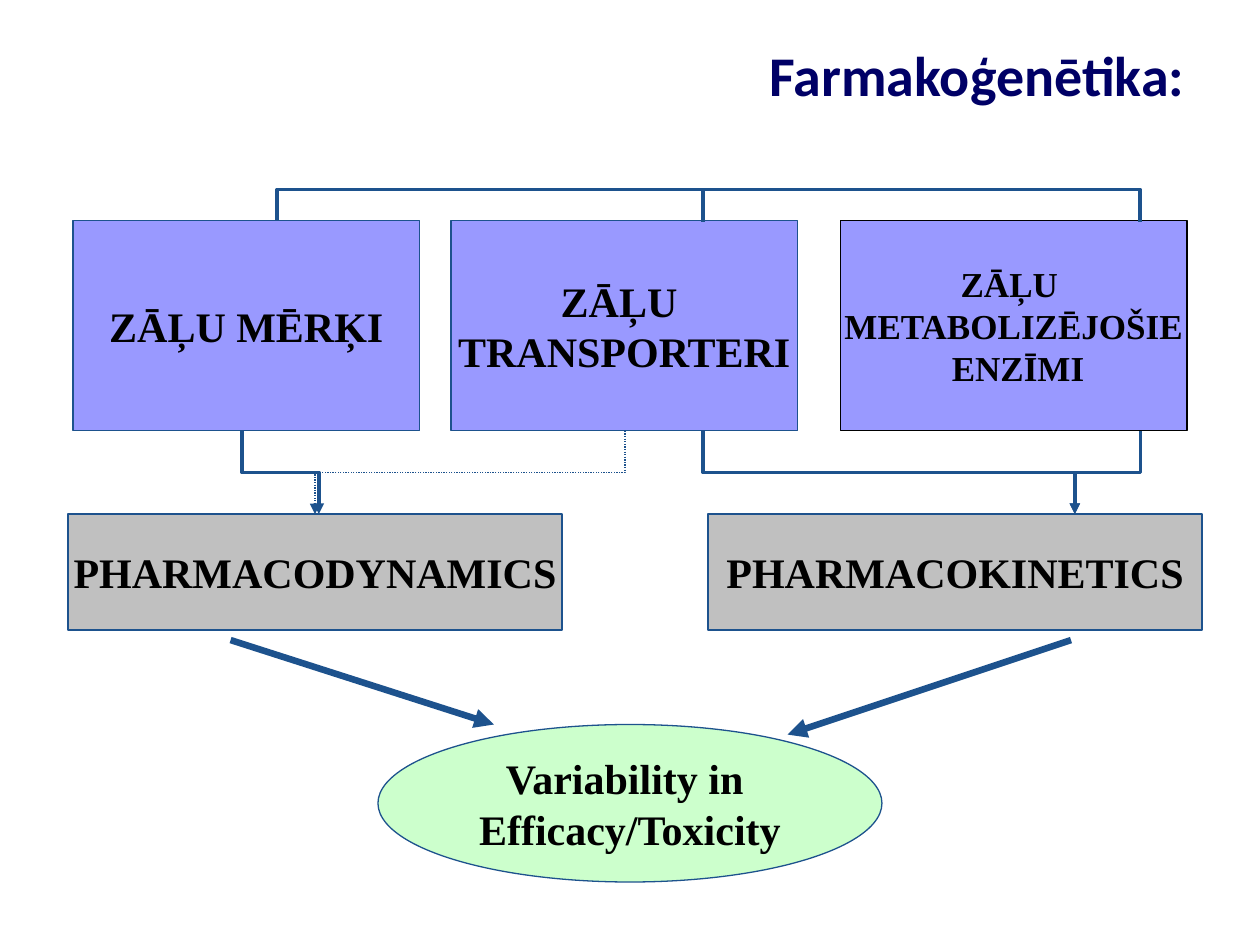
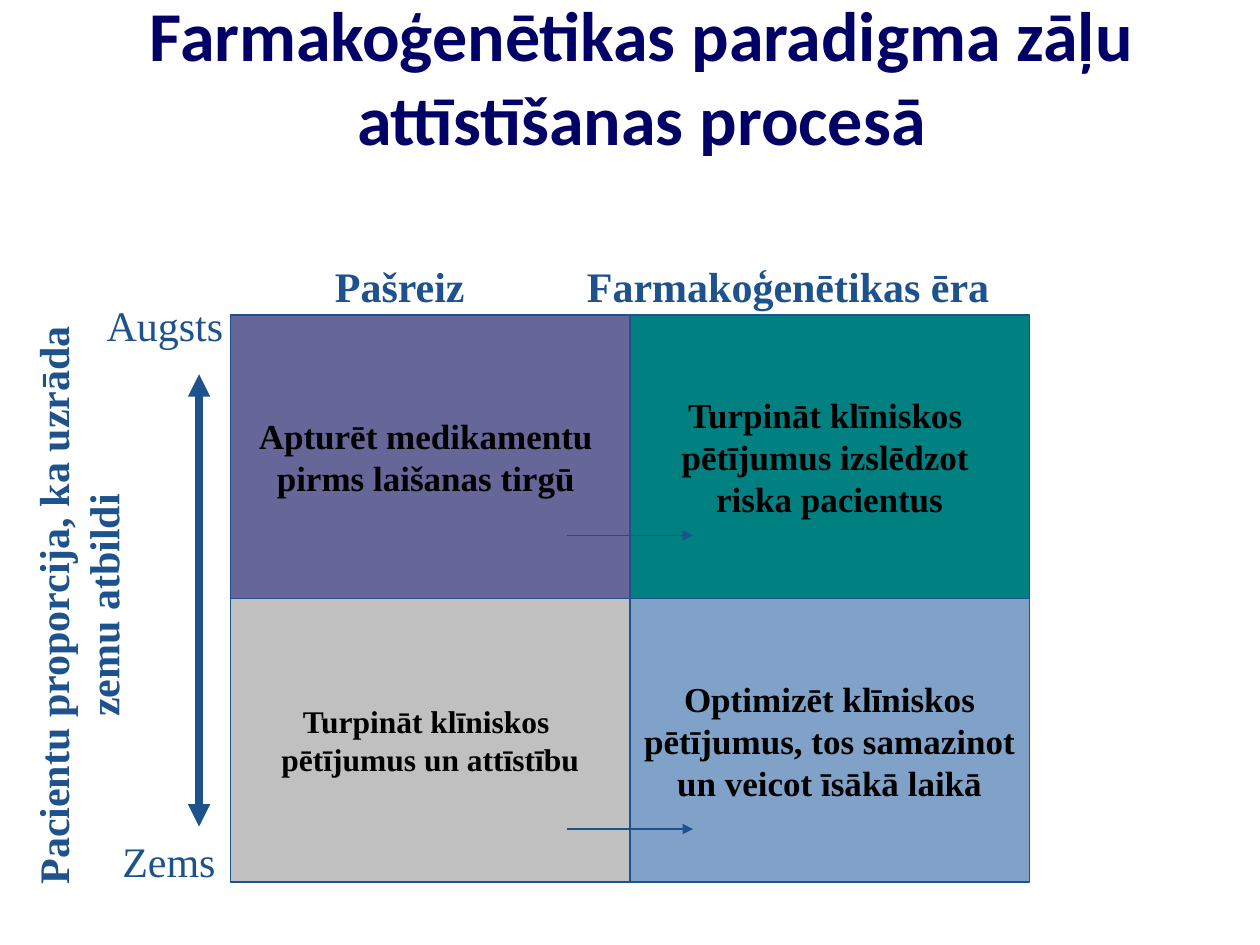
from pptx import Presentation
from pptx.dml.color import RGBColor
from pptx.enum.dml import MSO_LINE
from pptx.enum.shapes import MSO_CONNECTOR, MSO_SHAPE
from pptx.enum.text import MSO_ANCHOR, PP_ALIGN
from pptx.oxml.ns import qn
from pptx.util import Inches, Pt
from lxml.etree import SubElement

TITLE_FONT, BODY_FONT = "Calibri", "Times New Roman"
NAVY, BLUE, BLACK = "000066", "1D528D", "000000"
LILAC, GREY, MINT = "9999FF", "C0C0C0", "CCFFCC"
PURPLE, TEAL, SKY = "666699", "008080", "80A2C8"


def color(hex_code):
    return RGBColor.from_string(hex_code)


def write(frame, paragraphs, size, ink, font=BODY_FONT, bold=True,
          align=PP_ALIGN.CENTER, wrap=False, anchor=MSO_ANCHOR.MIDDLE, tab=None):
    frame.word_wrap = wrap
    frame.vertical_anchor = anchor
    for index, content in enumerate(paragraphs):
        paragraph = frame.paragraphs[0] if index == 0 else frame.add_paragraph()
        paragraph.alignment = align
        if tab:
            tabs = SubElement(paragraph._p.get_or_add_pPr(), qn("a:tabLst"))
            SubElement(tabs, qn("a:tab"), pos=str(Inches(tab)), algn="l")
        for number, line in enumerate(content.split("\n")):
            if number:
                paragraph.add_line_break()
            run = paragraph.add_run()
            run.text = line
            run.font.name = font
            run.font.size = Pt(size)
            run.font.bold = bold
            run.font.color.rgb = color(ink)


def add_text(slide, bounds, text, size=24, ink=BLUE, rotation=0,
             anchor=MSO_ANCHOR.TOP, **style):
    label = slide.shapes.add_textbox(*map(Inches, bounds))
    label.rotation = rotation
    write(label.text_frame, [text], size, ink, anchor=anchor, **style)


def add_title(slide, bounds, text, size, align):
    add_text(slide, bounds, text, size, NAVY, font=TITLE_FONT, align=align,
             wrap=True, anchor=MSO_ANCHOR.MIDDLE)


def add_node(shapes, bounds, paragraphs, fill, size=24, outline=BLUE,
             kind=MSO_SHAPE.RECTANGLE):
    node = shapes.add_shape(kind, *map(Inches, bounds))
    node.shadow.inherit = False
    node.fill.solid()
    node.fill.fore_color.rgb = color(fill)
    node.line.color.rgb = color(outline)
    node.line.width = Pt(0.75)
    write(node.text_frame, paragraphs, size, BLACK)


def add_line(shapes, start, end, width, arrows=("tailEnd",), dash=None,
             kind=MSO_CONNECTOR.STRAIGHT):
    line = shapes.add_connector(kind, *map(Inches, (*start, *end)))
    line.line.color.rgb = color(BLUE)
    line.line.width = Pt(width)
    if dash:
        line.line.dash_style = dash
    for arrow in arrows:
        SubElement(line.line._get_or_add_ln(), qn(f"a:{arrow}"), type="triangle")
    SubElement(line._element.spPr, qn("a:effectLst"))
    return line


def add_elbow(shapes, start, end, width=2, bend=0.5, **style):
    (x1, y1), (x2, y2) = start, end
    middle_x, middle_y = (x1 + x2) / 2, (y1 + y2) / 2
    half_run, half_drop = (x2 - x1) / 2, (y2 - y1) / 2
    elbow = add_line(shapes, (middle_x - half_drop, middle_y + half_run),
                     (middle_x + half_drop, middle_y - half_run), width,
                     kind=MSO_CONNECTOR.ELBOW, **style)
    properties = elbow._element.spPr
    properties.find(qn("a:xfrm")).set("rot", str(90 * 60000))
    guides = properties.find(qn("a:prstGeom")).find(qn("a:avLst"))
    SubElement(guides, qn("a:gd"), name="adj1", fmla=f"val {round(bend * 100000)}")


def build_factors(slide):
    shapes = slide.shapes
    add_title(slide, (0.51, 0.21, 8.99, 0.75), "Farmakoģenētika:", 32, PP_ALIGN.RIGHT)

    factor_top, factor_bottom, effect_top = 1.75, 3.42, 4.08
    for left, text, size, outline in (
            (0.58, "ZĀĻU MĒRĶI", 24, BLUE),
            (3.58, "ZĀĻU \nTRANSPORTERI", 24, BLUE),
            (6.67, "ZĀĻU \nMETABOLIZĒJOŠIE\n ENZĪMI", 20, BLACK)):
        add_node(shapes, (left, factor_top, 2.75, 1.67), [text], LILAC, size, outline)
    for left, text in ((0.54, "PHARMACODYNAMICS"), (5.62, "PHARMACOKINETICS")):
        add_node(shapes, (left, effect_top, 3.92, 0.92), [text], GREY)
    add_node(shapes, (3, 5.75, 4, 1.25), ["Variability in ", "Efficacy/Toxicity"],
             MINT, kind=MSO_SHAPE.OVAL)

    for start_x, end_x in ((2.2, 5.58), (5.58, 9.05)):
        add_elbow(shapes, (start_x, factor_top), (end_x, factor_top + 0.01),
                  bend=-25, arrows=())
    for start_x, end_x in ((1.92, 2.53), (9.05, 8.53), (5.58, 8.53)):
        add_elbow(shapes, (start_x, factor_bottom), (end_x, effect_top))
    add_elbow(shapes, (4.96, factor_bottom), (2.5, effect_top), 0.75,
              dash=MSO_LINE.ROUND_DOT)
    add_line(shapes, (1.83, 5.08), (3.92, 5.75), 3.75)
    add_line(shapes, (8.5, 5.08), (6.25, 5.83), 3.75)


def build_paradigm(slide):
    add_title(slide, (0.59, 0.29, 9, 0.62),
              "Farmakoģenētikas paradigma zāļu attīstīšanas procesā", 40, PP_ALIGN.CENTER)
    add_text(slide, (2.56, 2.02, 7, 0.5), "Pašreiz\tFarmakoģenētikas ēra",
             align=PP_ALIGN.LEFT, wrap=True, tab=2)
    add_text(slide, (-1.72, 4.35, 4.68, 0.91),
             "Pacientu proporcija, ka uzrāda\nzemu atbildi", rotation=270)
    add_line(slide.shapes, (1.58, 2.97), (1.58, 6.56), 4.25, ("headEnd", "tailEnd"))
    for bounds, text in (((0.86, 6.58, 0.95, 0.5), "Zems"),
                         ((0.73, 2.33, 1.14, 0.5), "Augsts")):
        add_text(slide, bounds, text, bold=False, align=PP_ALIGN.RIGHT)

    matrix = slide.shapes.add_group_shape().shapes
    cell_width, cell_height = 3.17, 2.25
    cells = (
        (["Apturēt medikamentu ", "pirms laišanas tirgū "], PURPLE, 20),
        (["Turpināt klīniskos \npētījumus izslēdzot \nriska pacientus"], TEAL, 20),
        (["Turpināt klīniskos \npētījumus un attīstību"], GREY, 18),
        (["Optimizēt klīniskos\npētījumus, tos samazinot\nun veicot īsākā laikā"], SKY, 20),
    )
    for index, (paragraphs, fill, size) in enumerate(cells):
        row, column = divmod(index, 2)
        add_node(matrix, (1.83 + column * cell_width, 2.5 + row * cell_height,
                          cell_width, cell_height), paragraphs, fill, size)
    for shift_y in (4.25, 6.58):
        add_line(matrix, (4.5, shift_y), (5.5, shift_y), 0.75)


def main():
    deck = Presentation()
    deck.slide_width, deck.slide_height = Inches(10), Inches(7.5)
    for build in (build_factors, build_paradigm):
        build(deck.slides.add_slide(deck.slide_layouts[6]))
    deck.save("out.pptx")


if __name__ == "__main__":
    main()
